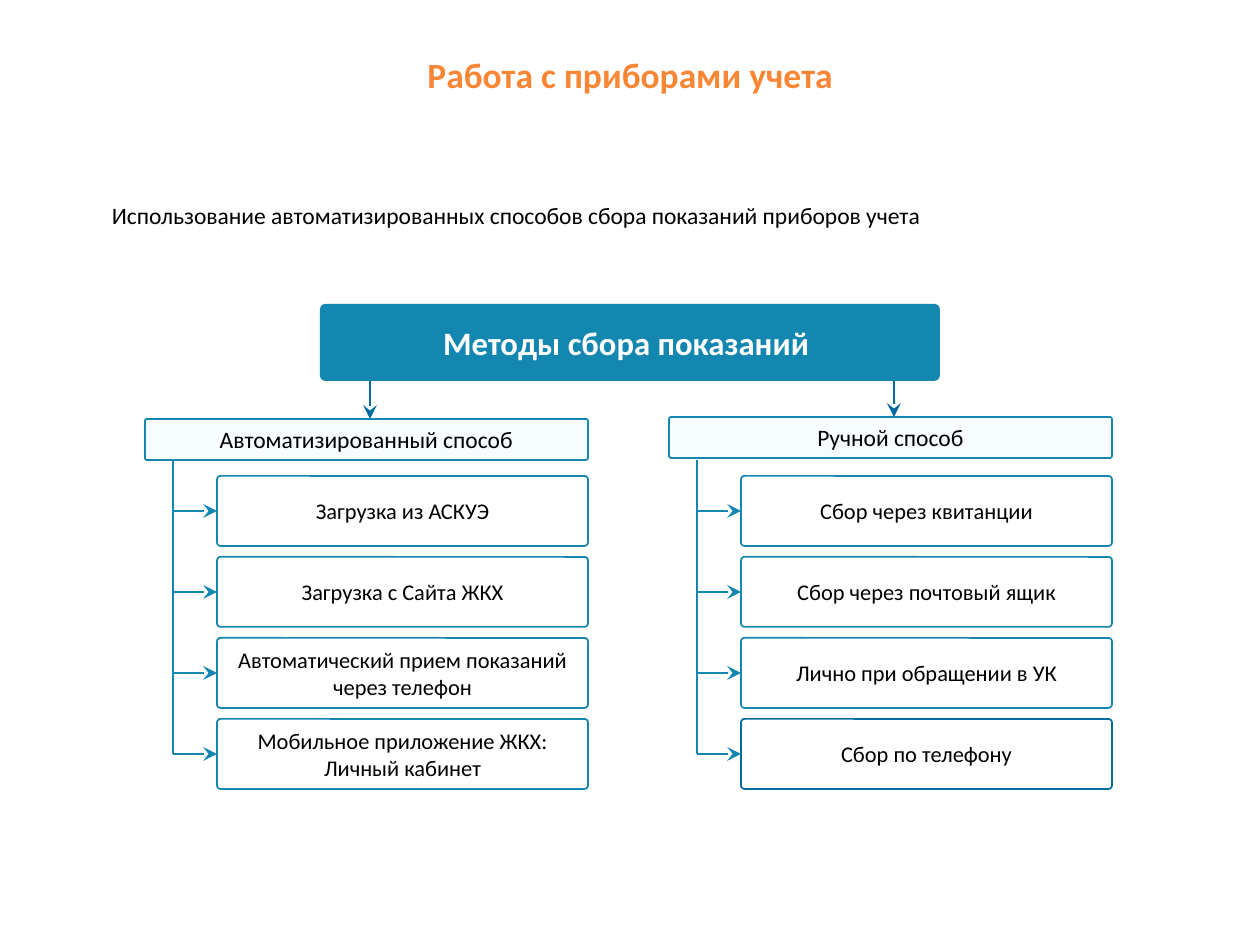
"""Build the slide on methods of collecting meter readings."""
from dataclasses import dataclass

from lxml.etree import SubElement
from pptx import Presentation
from pptx.dml.color import RGBColor
from pptx.enum.shapes import MSO_CONNECTOR, MSO_SHAPE
from pptx.enum.text import MSO_ANCHOR as Anchor, MSO_AUTO_SIZE, PP_ALIGN as Align
from pptx.oxml.ns import qn
from pptx.shapes.autoshape import Shape
from pptx.shapes.connector import Connector
from pptx.shapes.shapetree import SlideShapes
from pptx.text.text import TextFrame
from pptx.util import Emu, Pt

ORANGE = RGBColor(0xF9, 0x86, 0x34)
TEAL = RGBColor(0x14, 0x87, 0xB1)
DEEP_BLUE = RGBColor(0x00, 0x6B, 0x9E)
PALE_BLUE = RGBColor(0xF7, 0xFC, 0xFF)
BLACK = RGBColor(0x00, 0x00, 0x00)
WHITE = RGBColor(0xFF, 0xFF, 0xFF)

PX_PER_INCH = 168
SLIDE_WIDTH, SLIDE_HEIGHT = 1260, 945
ROOT_TOP, ROOT_BOTTOM = 304, 381
ITEM_TOP, ITEM_PITCH = 476, 81
ITEM_WIDTH, ITEM_HEIGHT = 371, 70
METHOD_WIDTH, METHOD_HEIGHT = 443, 41
TRUNK_INDENT, ITEM_INDENT, ARROW_INDENT = 28, 72, 225
TRUNK_TOP = 460


@dataclass(frozen=True)
class Box:
    left: int
    top: int
    width: int
    height: int


@dataclass(frozen=True)
class Method:
    name: str
    left: int
    top: int
    items: tuple[str, ...]
    last_outline: RGBColor


METHODS = (
    Method("Автоматизированный способ", 145, 419,
           ("Загрузка из АСКУЭ", "Загрузка с Сайта ЖКХ",
            "Автоматический прием показаний через телефон",
            "Мобильное приложение ЖКХ: Личный кабинет"), TEAL),
    Method("Ручной способ", 669, 417,
           ("Сбор через квитанции", "Сбор через почтовый ящик",
            "Лично при обращении в УК", "Сбор по телефону"), DEEP_BLUE),
)


def px(length: int) -> Emu:
    """Turn pixels into EMU."""
    return Emu(round(length * 914400 / PX_PER_INCH))


def emu_box(box: Box) -> tuple[Emu, Emu, Emu, Emu]:
    """Give the place and size of a box in EMU."""
    return px(box.left), px(box.top), px(box.width), px(box.height)


def write_text(frame: TextFrame, text: str, *, size: float, color: RGBColor = BLACK,
               bold: bool = False, align: Align = Align.CENTER,
               anchor: Anchor = Anchor.MIDDLE, spacing: float = 1.0,
               inset_x: int = 10, inset_y: int = 10) -> None:
    """Write one formatted paragraph."""
    frame.word_wrap = True
    frame.auto_size = MSO_AUTO_SIZE.NONE
    frame.vertical_anchor = anchor
    frame.margin_left = frame.margin_right = px(inset_x)
    frame.margin_top = frame.margin_bottom = px(inset_y)
    paragraph = frame.paragraphs[0]
    paragraph.alignment = align
    paragraph.line_spacing = spacing
    run = paragraph.add_run()
    run.text = text
    run.font.name = "Calibri"
    run.font.size = Pt(size)
    run.font.bold = bold
    run.font.color.rgb = color


def add_card(shapes: SlideShapes, box: Box, *, fill: RGBColor | None = None,
             outline: RGBColor | None = None, rounding: float = 0.05) -> Shape:
    """Add a rounded rectangle."""
    card = shapes.add_shape(MSO_SHAPE.ROUNDED_RECTANGLE, *emu_box(box))
    card.adjustments[0] = rounding
    card.shadow.inherit = False
    if fill is None:
        card.fill.background()
    else:
        card.fill.solid()
        card.fill.fore_color.rgb = fill
    if outline is None:
        card.line.fill.background()
    else:
        card.line.color.rgb = outline
        card.line.width = Pt(0.75)
    return card


def add_line(shapes: SlideShapes, start: tuple[int, int], end: tuple[int, int], *,
             color: RGBColor = TEAL, arrow: bool = False) -> Connector:
    """Add a thin line, with an arrowhead at its end if asked."""
    line = shapes.add_connector(MSO_CONNECTOR.STRAIGHT, *map(px, (*start, *end)))
    line.line.color.rgb = color
    line.line.width = Pt(0.5)
    properties = line._element.spPr
    if arrow:
        SubElement(properties.find(qn("a:ln")), qn("a:tailEnd"), type="stealth")
    SubElement(properties, qn("a:effectLst"))
    return line


def add_method(shapes: SlideShapes, method: Method) -> None:
    """Add one method with its branch of items."""
    heading = add_card(shapes, Box(method.left, method.top, METHOD_WIDTH, METHOD_HEIGHT),
                       fill=PALE_BLUE, outline=TEAL)
    write_text(heading.text_frame, method.name, size=10.1)
    arrow_x = method.left + ARROW_INDENT
    add_line(shapes, (arrow_x, ROOT_BOTTOM), (arrow_x, method.top),
             color=DEEP_BLUE, arrow=True)

    trunk_x = method.left + TRUNK_INDENT
    item_x = method.left + ITEM_INDENT
    last = len(method.items) - 1
    for index, text in enumerate(method.items):
        top = ITEM_TOP + index * ITEM_PITCH
        middle = top + ITEM_HEIGHT // 2
        item = add_card(shapes, Box(item_x, top, ITEM_WIDTH, ITEM_HEIGHT),
                        outline=method.last_outline if index == last else TEAL)
        write_text(item.text_frame, text, size=9.6)
        branch = add_line(shapes, (trunk_x, middle), (item_x, middle), arrow=True)
        branch.end_connect(item, 1)
    add_line(shapes, (trunk_x, TRUNK_TOP), (trunk_x, middle))


def main() -> None:
    """Build and save the slide."""
    deck = Presentation()
    deck.slide_width, deck.slide_height = px(SLIDE_WIDTH), px(SLIDE_HEIGHT)
    shapes = deck.slides.add_slide(deck.slide_layouts[5]).shapes

    title = shapes.title
    title.left, title.top, title.width, title.height = emu_box(Box(267, 42, 727, 57))
    write_text(title.text_frame, "Работа с приборами учета", size=15.2, color=ORANGE,
               bold=True, anchor=Anchor.TOP, spacing=1.14, inset_y=5)

    intro = shapes.add_textbox(*emu_box(Box(102, 193, 892, 40)))
    write_text(intro.text_frame,
               "Использование автоматизированных способов сбора показаний приборов учета",
               size=10.1, align=Align.LEFT, anchor=Anchor.TOP, spacing=1.1, inset_y=5)

    root = add_card(shapes, Box(320, ROOT_TOP, 620, ROOT_BOTTOM - ROOT_TOP),
                    fill=TEAL, rounding=0.07)
    write_text(root.text_frame, "Методы сбора показаний ", size=14, color=WHITE,
               bold=True, inset_x=17, inset_y=8)

    for method in METHODS:
        add_method(shapes, method)
    deck.save("out.pptx")


if __name__ == "__main__":
    main()
